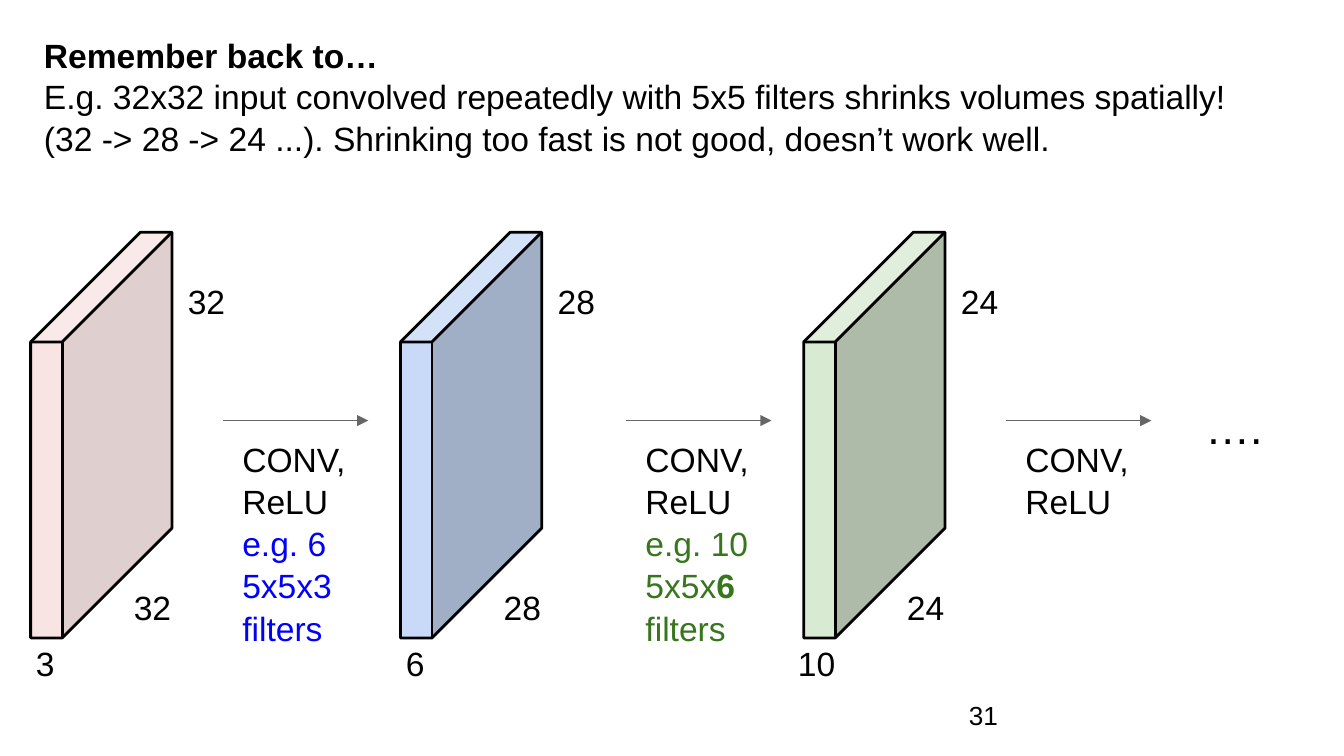
"""Build a slide on how repeated convolutions shrink volumes."""
from lxml import etree
from pptx import Presentation
from pptx.dml.color import RGBColor
from pptx.enum import shapes, text
from pptx.oxml.ns import qn
from pptx.util import Cm, Pt

HUES = {"ink": "000000", "arrow": "666666", "pink": "F4CCCC", "sky": "C9DAF8",
        "mint": "D9EAD3", "blue": "0000FF", "green": "38761D"}
HEAD = "Remember back to…"
BODY = ["E.g. 32x32 input convolved repeatedly with 5x5 filters shrinks volumes spatially!",
        "(32 -> 28 -> 24 ...). Shrinking too fast is not good, doesn’t work well."]
CUBES = [
    {"x": 0.58, "hue": "pink", "alpha": 52, "side": "32", "depth": "3", "shift": -0.15},
    {"x": 7.57, "hue": "sky", "alpha": 100, "side": "28", "depth": "6", "shift": -0.15},
    {"x": 15.19, "hue": "mint", "alpha": 100, "side": "24", "depth": "10", "shift": -0.36},
]
STEPS = [
    {"x": 4.22, "hue": "blue", "runs": [("e.g. 6 5x5x3 filters", False)]},
    {"x": 11.84, "hue": "green",
     "runs": [("e.g. 10 5x5x", False), ("6 ", True), ("filters", False)]},
    {"x": 19.02, "hue": "ink", "runs": []},
]
LAYER = ["CONV,", "ReLU"]
TOP, WIDE, HIGH = 4.39, 2.67, 7.67
ROW, REACH = 7.95, 2.74


def paint(hue):
    return RGBColor.from_string(HUES[hue])


def style(para, size=18, hue="ink", bold=None):
    font = para.font
    font.name, font.size, font.bold = "Arial", Pt(size), bold
    font.color.rgb = paint(hue)
    para.alignment = text.PP_ALIGN.LEFT
    para.line_spacing, para.space_before = 1.05, Pt(0)


def write(box, at, lines, size=18, bold=None, anchor=text.MSO_ANCHOR.TOP):
    box.left, box.top, box.width, box.height = map(Cm, at)
    frame = box.text_frame
    frame.word_wrap, frame.auto_size = True, text.MSO_AUTO_SIZE.NONE
    frame.vertical_anchor = anchor
    frame.margin_left = frame.margin_right = Cm(0.25)
    frame.margin_top = frame.margin_bottom = Cm(0.25)
    frame.text = "\n".join(lines)
    for para in frame.paragraphs:
        style(para, size, bold=bold)
    return frame


def label(slide, at, lines, **look):
    return write(slide.shapes.add_textbox(0, 0, 0, 0), at, lines, **look)


def draw_cube(slide, x, hue, alpha, side, depth, shift):
    cube = slide.shapes.add_shape(shapes.MSO_SHAPE.CUBE, Cm(x), Cm(TOP), Cm(WIDE), Cm(HIGH))
    cube.adjustments[0] = 0.777
    cube.shadow.inherit = False
    cube.fill.solid()
    cube.fill.fore_color.rgb = paint(hue)
    if alpha < 100:
        tint = cube.fill._xPr.find(".//" + qn("a:srgbClr"))
        etree.SubElement(tint, qn("a:alpha"), val=str(alpha * 1000))
    cube.line.color.rgb, cube.line.width = paint("ink"), Pt(1.5)
    for dx, y, word in [(1.7, 10.8, side), (2.72, 5.03, side), (shift, 11.86, depth)]:
        label(slide, (x + dx, y, 1.37, 0.8), [word])


def draw_step(slide, x, hue, runs):
    arrow = slide.shapes.add_connector(
        shapes.MSO_CONNECTOR.STRAIGHT, Cm(x), Cm(ROW), Cm(x + REACH), Cm(ROW))
    arrow.line.color.rgb, arrow.line.width = paint("arrow"), Pt(0.75)
    etree.SubElement(arrow.line._get_or_add_ln(), qn("a:tailEnd"), type="triangle")
    etree.SubElement(arrow._element.spPr, qn("a:effectLst"))
    frame = label(slide, (x + 0.11, 8, 2.95, 1.09), LAYER)
    if runs:
        para = frame.add_paragraph()
        style(para, hue=hue)
        for word, bold in runs:
            run = para.add_run()
            run.text, run.font.bold = word, bold
            run.font.name, run.font.size = "Arial", Pt(18)
            run.font.color.rgb = paint(hue)


def main():
    deck = Presentation()
    deck.slide_width, deck.slide_height = Cm(25.4), Cm(14.29)
    slide = deck.slides.add_slide(deck.slide_layouts[1])
    title, body = slide.placeholders
    write(title, (0.58, 0.38, 23.75, 1.2), [HEAD], bold=True)
    frame = write(body, (0.58, 1.15, 23.75, 2.1), BODY)
    for para in frame.paragraphs:
        props = para._p.get_or_add_pPr()
        props.set("marL", "0")
        props.set("indent", "0")
        etree.SubElement(props, qn("a:buNone"))
        props.append(props.find(qn("a:defRPr")))
    for cube in CUBES:
        draw_cube(slide, **cube)
    for step in STEPS:
        draw_step(slide, **step)
    label(slide, (22.53, 7.26, 2.67, 1), ["…."], size=24)
    label(slide, (18.06, 12.95, 1.52, 1.09), ["31"], size=14, anchor=text.MSO_ANCHOR.MIDDLE)
    deck.save("out.pptx")


if __name__ == "__main__":
    main()
